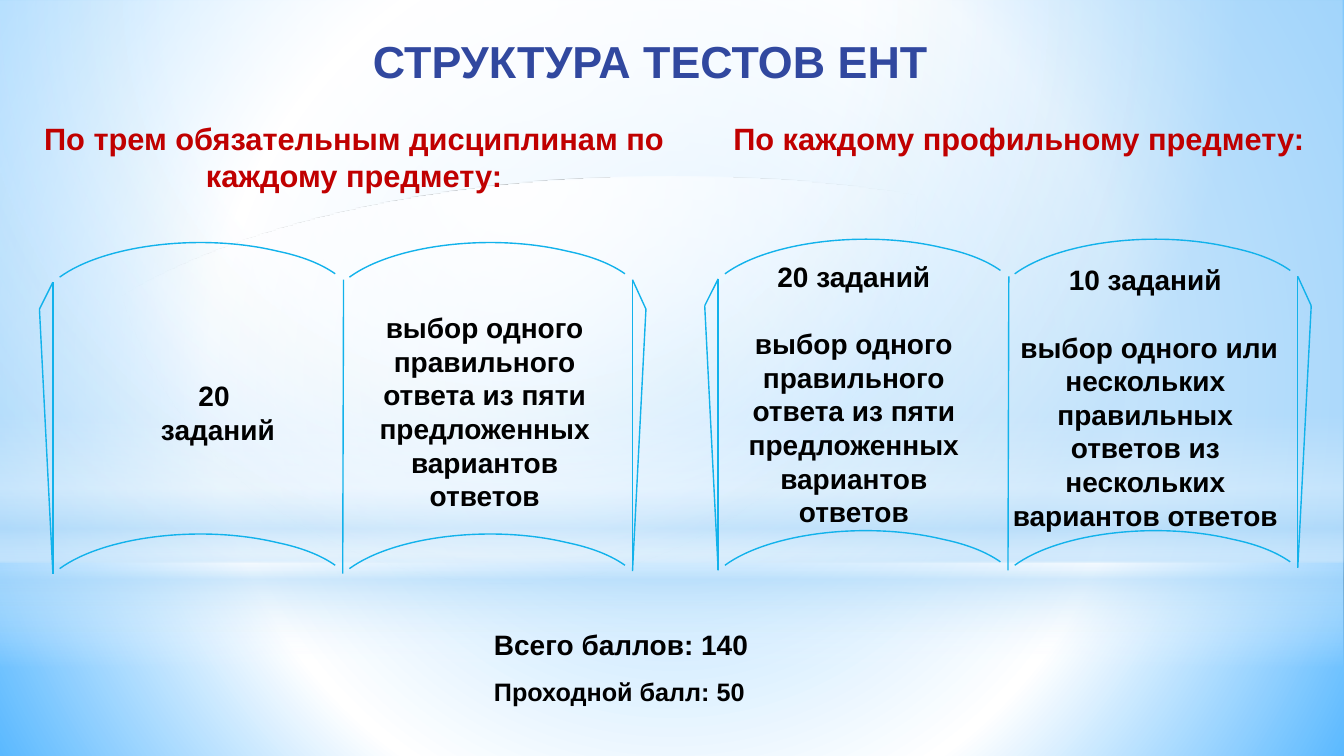
from lxml import etree
from pptx import Presentation
from pptx.dml.color import RGBColor
from pptx.enum.shapes import MSO_CONNECTOR, MSO_SHAPE
from pptx.enum.text import MSO_ANCHOR, MSO_AUTO_SIZE, PP_ALIGN
from pptx.oxml.ns import qn
from pptx.util import Inches, Pt

LEFT, CENTER = PP_ALIGN.LEFT, PP_ALIGN.CENTER
RECT, OVAL = MSO_SHAPE.RECTANGLE, MSO_SHAPE.OVAL
STRAIGHT = MSO_CONNECTOR.STRAIGHT
BLUE, RED, BLACK, CYAN = "31489F", "C00000", "000000", "12B2EB"
WHITE, SKY = "FFFFFF", "B4DCFA"

# The slide is a grid of 160 columns and 90 rows of square cells
COLUMNS, ROWS = 160, 90
SLIDE_WIDTH = 12192000
CELL = SLIDE_WIDTH // COLUMNS
GLOW = (38, -20, 62, 120)

# Two Bezier curves of a page edge, in cells from the left end and the top
PAGE_EDGE = [(0, 4.1), (5.2, 0.3), (16.7, -1.2), (25.9, 1),
             (28.8, 1.6), (31.1, 2.5), (32.8, 3.7)]


def cells(*values):
    return [round(value * CELL) for value in values]


def color(hex_string):
    return RGBColor.from_string(hex_string)


def set_gradient(element, stops, focus=None):
    """Swap the solid fill for a gradient: circular with a focus, else vertical."""
    solid = element.find(".//" + qn("a:solidFill"))
    gradient = etree.Element(qn("a:gradFill"), rotWithShape="1")
    stop_list = etree.SubElement(gradient, qn("a:gsLst"))
    for position, hex_string, opacity in stops:
        stop = etree.SubElement(stop_list, qn("a:gs"), pos=str(position * 1000))
        tone = etree.SubElement(stop, qn("a:srgbClr"), val=hex_string)
        if opacity < 100:
            etree.SubElement(tone, qn("a:alpha"), val=str(opacity * 1000))
    if focus:
        circle = etree.SubElement(gradient, qn("a:path"), path="circle")
        sides = {side: str(share * 1000) for side, share in zip("ltrb", focus)}
        etree.SubElement(circle, qn("a:fillToRect"), **sides)
    else:
        etree.SubElement(gradient, qn("a:lin"), ang="5400000", scaled="0")
    solid.getparent().replace(solid, gradient)


def add_backdrop(slide):
    slide.background.fill.solid()
    set_gradient(slide.element, [(0, "9DD5FF", 100), (60, WHITE, 100),
                                 (100, "5BB9FF", 100)], (50, 50, 50, 50))
    # Ground, sky, horizon and halo: shape, top row, rows, stops, focus
    layers = [
        (RECT, 67, 23, [(0, WHITE, 91), (37, WHITE, 76), (100, SKY, 79)], GLOW),
        (RECT, 0, 67, [(0, WHITE, 89), (48, WHITE, 62), (100, SKY, 79)], GLOW),
        (RECT, 49.4, 30, [(0, WHITE, 0), (29, WHITE, 30), (45, SKY, 40),
                          (55, WHITE, 26), (65, SKY, 60), (100, WHITE, 0)], None),
        (OVAL, 21, 67, [(0, WHITE, 100), (56, WHITE, 0)], GLOW),
    ]
    master_tree = slide.slide_layout.slide_master.element.find(".//" + qn("p:spTree"))
    for number, (kind, top, height, stops, focus) in enumerate(layers, 100):
        layer = slide.shapes.add_shape(kind, *cells(0, top, COLUMNS, height))
        layer.shadow.inherit = False
        layer.fill.solid()
        layer.line.fill.background()
        set_gradient(layer.element, stops, focus)
        # The layers belong to the master, behind everything on the slide
        layer.element.find(".//" + qn("p:cNvPr")).set("id", str(number))
        master_tree.append(layer.element)


def write(frame, paragraphs, size, tone, align=CENTER, gap=0):
    """Fill a text frame; gap is the space in points before later paragraphs."""
    frame.text = "\n".join(paragraphs)
    frame.word_wrap = True
    frame.auto_size = MSO_AUTO_SIZE.NONE
    frame.vertical_anchor = MSO_ANCHOR.TOP
    frame.margin_left = frame.margin_right = Inches(0.05)
    frame.margin_top = frame.margin_bottom = Inches(0.05)
    for index, paragraph in enumerate(frame.paragraphs):
        paragraph.alignment = align
        paragraph.space_before = Pt(gap if index else 0)
        for run in paragraph.runs:
            run.font.name = "Arial"
            run.font.size = Pt(size)
            run.font.bold = True
            run.font.color.rgb = color(tone)


def add_text(slide, box, paragraphs, size, tone, align=CENTER, gap=0):
    frame = slide.shapes.add_textbox(*cells(*box)).text_frame
    write(frame, paragraphs, size, tone, align, gap)


def add_title(slide, box, text):
    title = slide.shapes.title
    title.left, title.top, title.width, title.height = cells(*box)
    write(title.text_frame, [text], 32, BLUE, LEFT)


def add_page_edge(slide, left, top):
    # The curve itself stays inside the box, only a control point rises above it
    corners = [cells(left + x, top + max(y, 0)) for x, y in PAGE_EDGE]
    corners.insert(1, cells(left + 16.4, top))
    builder = slide.shapes.build_freeform(*corners[0], scale=1.0)
    builder.add_line_segments(corners[1:], close=False)
    edge = builder.convert_to_shape()
    # Replace the straight segments by the two curves
    outline = edge.element.find(".//" + qn("a:pathLst"))[0]
    for segment in outline.findall(qn("a:lnTo")):
        outline.remove(segment)
    for first in (1, 4):
        curve = etree.SubElement(outline, qn("a:cubicBezTo"))
        for point in PAGE_EDGE[first:first + 3]:
            x, y = cells(*point)
            etree.SubElement(curve, qn("a:pt"), x=str(x), y=str(y))
    edge.shadow.inherit = False
    edge.fill.background()
    edge.line.color.rgb = color(CYAN)
    edge.line.width = Pt(1)


def add_book(slide, left, top, pages):
    """Draw an open book; pages hold a box inside the book and its paragraphs."""
    width, height, shoulder = 72.2, 39.4, 7.9
    cover, spine = 1.6, 36.2
    back = width - cover
    # Top and bottom edges of both pages
    for row in (0, 34.7):
        for column in (2.4, 36.9):
            add_page_edge(slide, left + column, top + row)
    # Covers, spine and side flaps
    strokes = [
        (cover, 4.7, cover, height), (spine, 4.4, spine - 0.1, height),
        (back, 4.4, back, height - 0.3),
        (0, shoulder, cover, height), (width, shoulder, back, height - 0.3),
        (0, shoulder, cover, 4.7), (back, shoulder, back, 4.4),
        (width, shoulder, back, 4.4),
    ]
    for x1, y1, x2, y2 in strokes:
        stroke = slide.shapes.add_connector(
            STRAIGHT, *cells(left + x1, top + y1, left + x2, top + y2))
        stroke.line.color.rgb = color(CYAN)
        stroke.line.width = Pt(1)
        etree.SubElement(stroke.element.spPr, qn("a:effectLst"))
    # Page texts
    for (x, y, page_width, page_height), paragraphs, gap in pages:
        add_text(slide, (left + x, top + y, page_width, page_height),
                 paragraphs, 20, BLACK, gap=gap)


def add_scores(slide, left, top):
    add_text(slide, (left, top, 70.7, 4.9), ["Всего баллов: 140"], 20, BLACK, LEFT)
    add_text(slide, (left, top + 5.8, 32, 4.6), ["Проходной балл: 50"], 18, BLACK, LEFT)


def main():
    deck = Presentation()
    deck.slide_width, deck.slide_height = cells(COLUMNS, ROWS)
    slide = deck.slides.add_slide(deck.slide_layouts[5])
    add_backdrop(slide)
    add_title(slide, (43.8, 3.4, 95.6, 7.2), "СТРУКТУРА ТЕСТОВ ЕНТ")
    add_text(slide, (4.3, 13.7, 75.7, 9.7),
             ["По трем обязательным дисциплинам по каждому предмету:"], 22, RED)
    add_text(slide, (86.6, 13.7, 69.4, 5.4),
             ["По каждому профильному предмету:"], 22, RED)

    one_answer = "выбор одного правильного ответа из пяти предложенных вариантов ответов"
    several_answers = (" выбор одного или нескольких правильных ответов"
                       " из нескольких вариантов ответов")
    add_book(slide, 4.7, 28.9, [
        ((9.5, 15.6, 23.5, 8.8), ["20 ", "заданий"], 0),
        ((38.5, 7.5, 29, 24.1), [one_answer], 0),
    ])
    add_book(slide, 83.9, 28.5, [
        ((3.9, 1.8, 27.7, 31.8), ["20 заданий", one_answer], 24),
        ((35.4, 2.2, 34.1, 31.8), ["10 заданий", several_answers], 24),
    ])
    add_scores(slide, 58.2, 74.1)
    deck.save("out.pptx")


if __name__ == "__main__":
    main()
